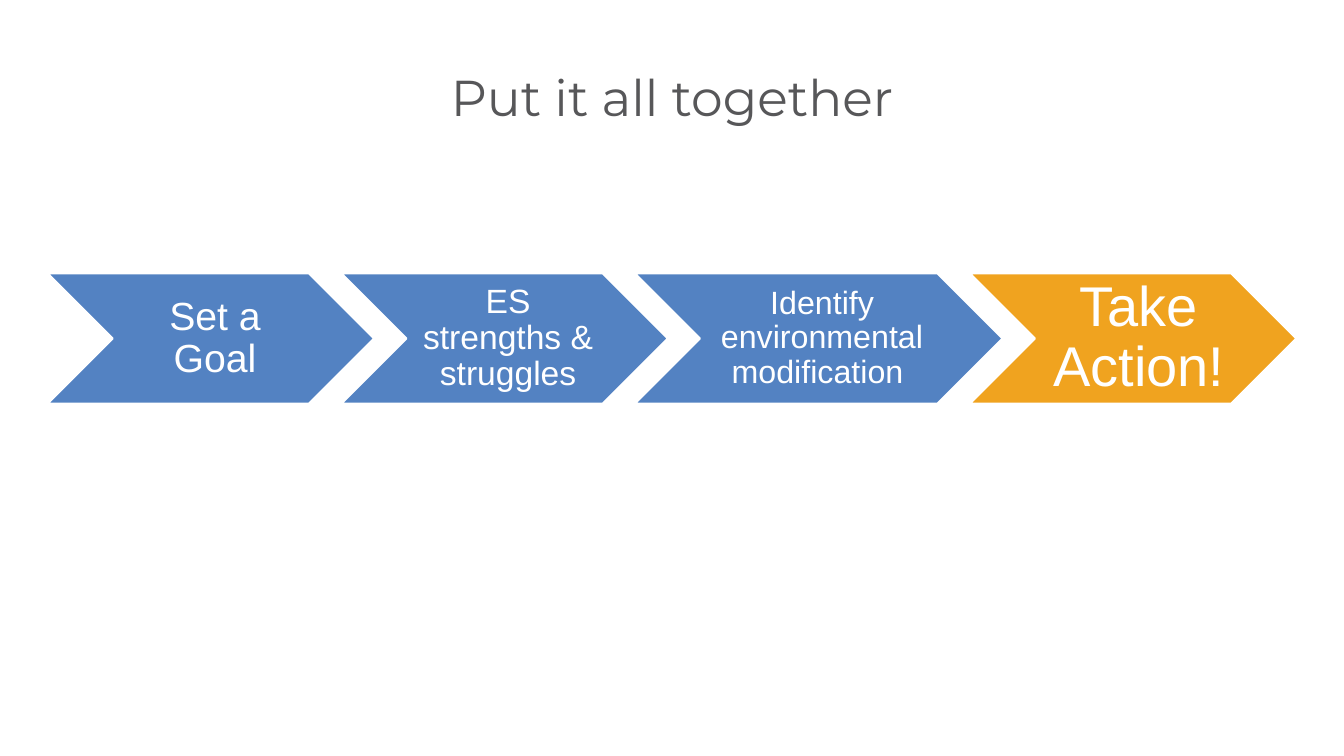
"""Build a slide with a title and a chain of four chevron steps."""
from pptx import Presentation
from pptx.dml.color import RGBColor
from pptx.enum.shapes import MSO_SHAPE
from pptx.enum.text import MSO_ANCHOR, MSO_AUTO_SIZE, PP_ALIGN
from pptx.util import Cm, Pt

COLOURS = {"title": "575759", "step": "5382C2", "action": "F0A31F", "white": "FFFFFF"}


def write_text(frame, text, *, size, font, colour, anchor, spacing=1.0):
    """Fill a text frame with one centred paragraph."""
    frame.word_wrap = True
    frame.vertical_anchor = anchor
    para = frame.paragraphs[0]
    para.alignment = PP_ALIGN.CENTER
    para.line_spacing = spacing
    span = para.add_run()
    span.text = text
    span.font.size = Pt(size)
    span.font.name = font
    span.font.color.rgb = RGBColor.from_string(COLOURS[colour])


deck = Presentation()
deck.slide_width, deck.slide_height = Cm(33.87), Cm(19.05)
page = deck.slides.add_slide(deck.slide_layouts[5])

title = page.shapes.title
title.left, title.top, title.width, title.height = Cm(2.2), Cm(1.55), Cm(29.47), Cm(1.8)
write_text(title.text_frame, "Put it all together", size=36, font="Montserrat",
           colour="title", anchor=MSO_ANCHOR.TOP)
title.text_frame.auto_size = MSO_AUTO_SIZE.SHAPE_TO_FIT_TEXT

steps = [
    ("Set a Goal", 28, 8.23, "step"),
    ("ES strengths & struggles", 24, 8.23, "step"),
    ("Identify environmental modification ", 23, 9.27, "step"),
    ("Take Action!", 40, 8.23, "action"),
]
step_top, step_height, overlap = 6.89, 3.28, 0.83
left = 1.2

for label, size, width, fill in steps:
    chevron = page.shapes.add_shape(MSO_SHAPE.CHEVRON, Cm(left), Cm(step_top),
                                    Cm(width), Cm(step_height))
    chevron.shadow.inherit = False
    chevron.fill.solid()
    chevron.fill.fore_color.rgb = RGBColor.from_string(COLOURS[fill])
    chevron.line.color.rgb = RGBColor.from_string(COLOURS["white"])
    chevron.line.width = Pt(1.5)
    frame = chevron.text_frame
    frame.margin_left = Cm(size / 90)
    frame.margin_top = frame.margin_right = frame.margin_bottom = Cm(size / 270)
    write_text(frame, label, size=size, font="Arial", colour="white",
               anchor=MSO_ANCHOR.MIDDLE, spacing=0.9)
    left += width - overlap

deck.save("out.pptx")
